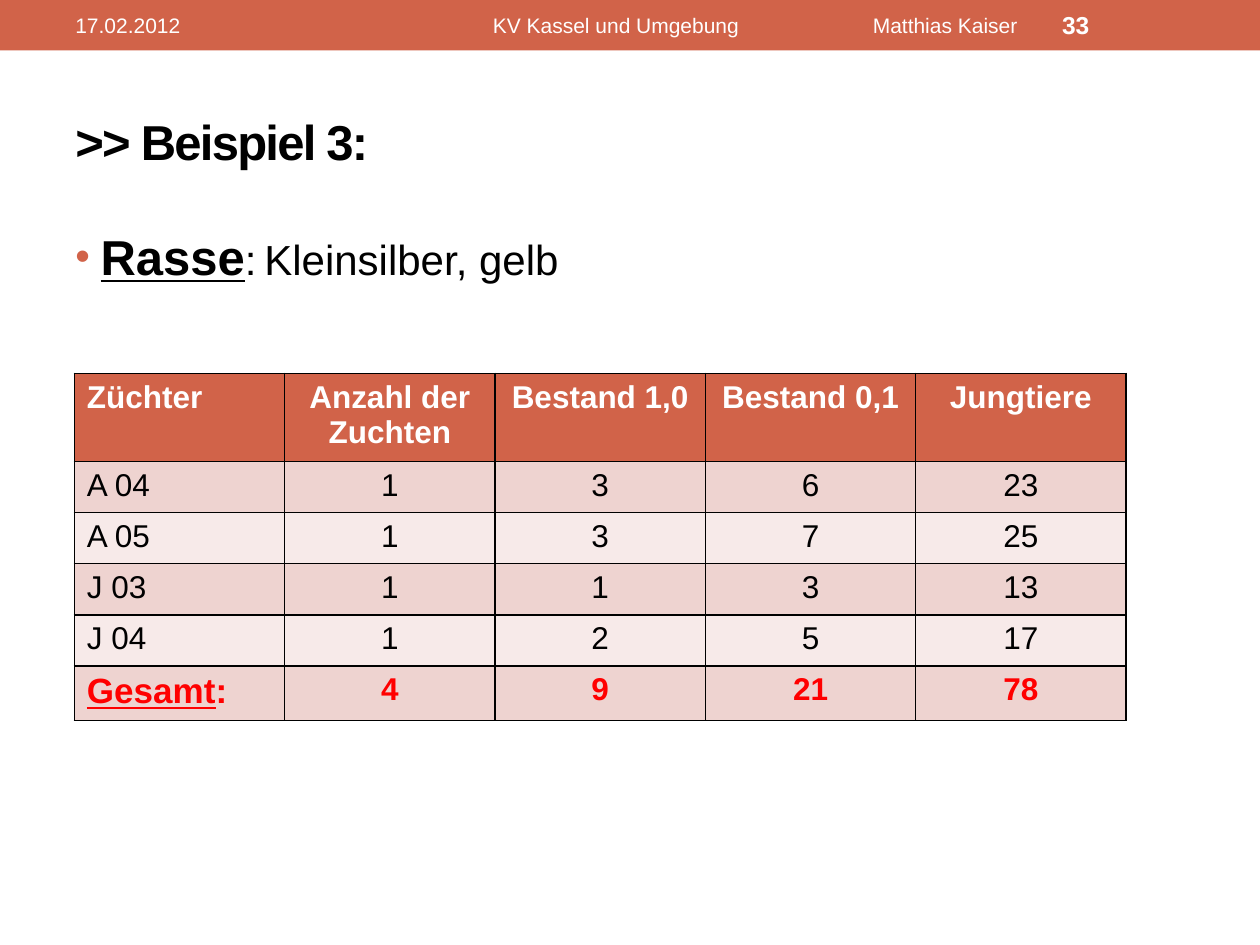
from lxml import etree
from pptx import Presentation
from pptx.dml.color import RGBColor
from pptx.enum.shapes import MSO_SHAPE
from pptx.enum.text import MSO_ANCHOR, PP_ALIGN
from pptx.oxml.ns import qn
from pptx.util import Pt

RECTANGLE = MSO_SHAPE.RECTANGLE
TOP, MIDDLE = MSO_ANCHOR.TOP, MSO_ANCHOR.MIDDLE
LEFT, CENTER = PP_ALIGN.LEFT, PP_ALIGN.CENTER

HEADER = ["Züchter", "Anzahl der Zuchten", "Bestand 1,0", "Bestand 0,1", "Jungtiere"]
LITTERS = [
    ["A 04", 1, 3, 6, 23],
    ["A 05", 1, 3, 7, 25],
    ["J 03", 1, 1, 3, 13],
    ["J 04", 1, 2, 5, 17],
]
TOTALS = ["Gesamt", 4, 9, 21, 78]


def color(value):
    return RGBColor.from_string(value)


def add_element(parent, tag, **attributes):
    element = etree.SubElement(parent, qn(tag))
    for name, value in attributes.items():
        element.set(name, str(value))
    return element


class SlideBuilder:
    font = "Arial"
    accent = "D16349"
    black = "000000"
    white = "FFFFFF"
    red = "FF0000"
    bands = ("EED3D0", "F7EAE9")

    def __init__(self, slide):
        self.slide = slide

    def format_run(self, run, size, ink, bold=False, underline=False):
        run.font.name = self.font
        run.font.size = Pt(size)
        run.font.color.rgb = color(ink)
        run.font.bold = bold
        run.font.underline = underline

    def bar(self, left, top, width, height):
        shape = self.slide.shapes.add_shape(
            RECTANGLE, Pt(left), Pt(top), Pt(width), Pt(height))
        shape.shadow.inherit = False
        shape.fill.solid()
        shape.fill.fore_color.rgb = color(self.accent)
        shape.line.fill.background()

    def text(self, box, text, size, ink, bold=False, anchor=MIDDLE):
        shape = self.slide.shapes.add_textbox(*(Pt(length) for length in box))
        frame = shape.text_frame
        frame.word_wrap = True
        frame.vertical_anchor = anchor
        frame.text = text
        paragraph = frame.paragraphs[0]
        self.format_run(paragraph.runs[0], size, ink, bold)
        return frame

    def title(self, box, text):
        frame = self.text(box, text, 28, self.black, bold=True)
        frame.paragraphs[0].runs[0].font._element.set("spc", "-100")

    def tabbed_text(self, box, text, inset, tab):
        frame = self.text(box, text, 12, self.white)
        frame.margin_left = Pt(inset)
        properties = frame.paragraphs[0]._p.get_or_add_pPr()
        tabs = add_element(properties, "a:tabLst")
        add_element(tabs, "a:tab", pos=Pt(tab), algn="l")

    def bullet(self, box, label, text):
        frame = self.text(box, label, 28, self.black, bold=True, anchor=TOP)
        paragraph = frame.paragraphs[0]
        paragraph.runs[0].font.underline = True
        run = paragraph.add_run()
        run.text = text
        self.format_run(run, 24, self.black)
        paragraph.space_before = Pt(4)
        properties = paragraph._p.get_or_add_pPr()
        properties.set("marL", str(Pt(14.4)))
        properties.set("indent", str(-Pt(14.4)))
        bullet_color = add_element(properties, "a:buClr")
        add_element(bullet_color, "a:srgbClr", val=self.accent)
        add_element(properties, "a:buSzPct", val=85000)
        add_element(properties, "a:buFont", typeface=self.font)
        add_element(properties, "a:buChar", char="•")

    def cell(self, cell, text, fill, ink, bold, alignment):
        properties = cell._tc.get_or_add_tcPr()
        for side in ("a:lnL", "a:lnR", "a:lnT", "a:lnB"):
            border = add_element(properties, side, w=Pt(1))
            border_fill = add_element(border, "a:solidFill")
            add_element(border_fill, "a:srgbClr", val=self.black)
        cell.fill.solid()
        cell.fill.fore_color.rgb = color(fill)
        cell.text_frame.text = str(text)
        paragraph = cell.text_frame.paragraphs[0]
        paragraph.alignment = alignment
        self.format_run(paragraph.runs[0], 18, ink, bold)

    def table(self, left, top, column_width, header_height, row_height):
        rows = [HEADER, *LITTERS, TOTALS]
        last = len(rows) - 1
        frame = self.slide.shapes.add_table(
            len(rows), len(HEADER), Pt(left), Pt(top),
            Pt(column_width * len(HEADER)), Pt(header_height + row_height * last))
        table = frame.table
        for column in table.columns:
            column.width = Pt(column_width)
        for index, values in enumerate(rows):
            table.rows[index].height = Pt(row_height if index else header_height)
            fill = self.bands[(index - 1) % 2] if index else self.accent
            ink = {0: self.white, last: self.red}.get(index, self.black)
            for position, value in enumerate(values):
                self.cell(table.cell(index, position), value, fill, ink,
                          index in (0, last), CENTER if position else LEFT)
        paragraph = table.cell(last, 0).text_frame.paragraphs[0]
        self.format_run(paragraph.runs[0], 20, self.red, True, True)
        colon = paragraph.add_run()
        colon.text = ":"
        self.format_run(colon, 20, self.red, True)


def main():
    presentation = Presentation()
    presentation.slide_width = Pt(720)
    presentation.slide_height = Pt(540)
    slide = presentation.slides.add_slide(presentation.slide_layouts[6])
    builder = SlideBuilder(slide)
    builder.bar(0, 0, 720, 28.8)
    builder.title((36, 41.8, 648, 77.8), ">> Beispiel 3:")
    builder.bullet((36, 126, 648, 383.8), "Rasse", ":\tKleinsilber, gelb")
    builder.text((36, 1.4, 264.2, 26), "17.02.2012", 12, builder.white)
    builder.tabbed_text((270, 1.4, 324, 26),
                        "KV Kassel und Umgebung\tMatthias Kaiser", 11.7, 217.1)
    builder.text((599.8, 1.4, 84.2, 26), "33", 14, builder.white, bold=True)
    builder.table(42.5, 213.3, 120.2, 47.5, 29.2)
    presentation.save("out.pptx")


if __name__ == "__main__":
    main()
